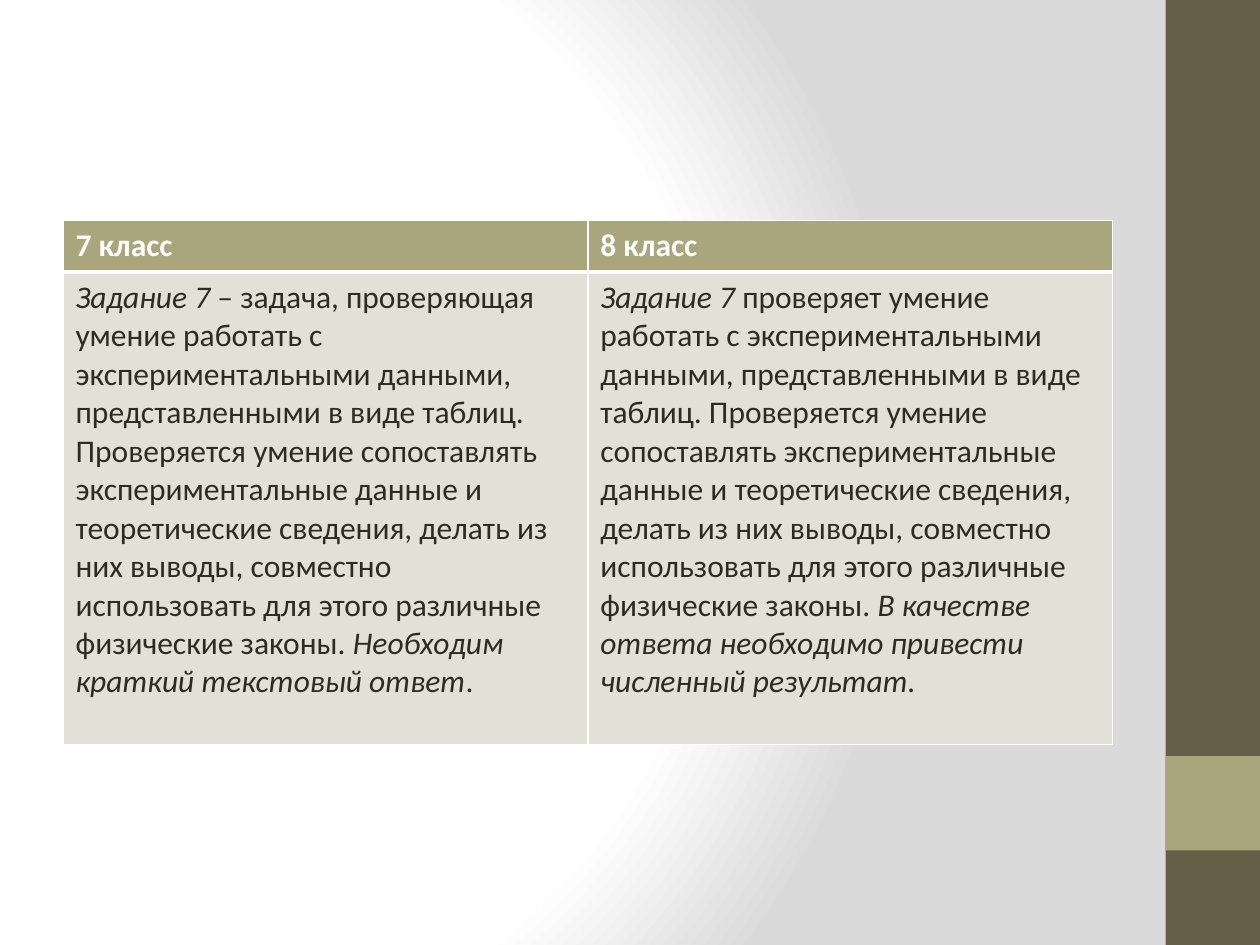
from pptx import Presentation
from pptx.dml.color import RGBColor
from pptx.enum.shapes import MSO_SHAPE
from pptx.oxml import parse_xml
from pptx.oxml.ns import nsdecls
from pptx.util import Inches, Pt

# Content: each cell is a list of (text, italic) runs
SKILL = (" проверя{} умение работать с экспериментальными данными, "
         "представленными в виде таблиц. Проверяется умение сопоставлять "
         "экспериментальные данные и теоретические сведения, делать из них "
         "выводы, совместно использовать для этого различные физические законы. ")
TASK = ("Задание 7", True)
ROWS = [
    [[("7 класс", False)], [("8 класс", False)]],
    [[TASK, (" – задача," + SKILL.format("ющая"), False),
      ("Необходим краткий текстовый ответ", True), (".", False)],
     [TASK, (SKILL.format("ет"), False),
      ("В качестве ответа необходимо привести численный результат.", True)]],
]

# Format of the header row and the body row
LOOKS = [
    {"fill": "A9A57C", "color": "FFFFFF", "bold": True, "high": 0.41, "base": 3},
    {"fill": "E2E1D7", "color": "2F2B20", "bold": False, "high": 3.75, "base": 1},
]
BARS = [((9.25, 0, 0.75, 7.5), "675E47"), ((9.25, 6, 0.75, 0.75), "A9A57C")]
STOPS = [(0, "FFFFFF"), (75, "FFFFFF"), (100, "DADADA")]
LEFT, TOP, WIDE = 0.5, 1.75, 8.33


def paint(fill, color):
    fill.solid()
    fill.fore_color.rgb = RGBColor.from_string(color)


def edge(cell, side, width):
    cell._tc.get_or_add_tcPr().append(parse_xml(
        f'<a:ln{side} {nsdecls("a")} w="{Pt(width)}"><a:solidFill>'
        f'<a:srgbClr val="FFFFFF"/></a:solidFill></a:ln{side}>'))


def write(cell, runs, look):
    for text, slant in runs:
        run = cell.text_frame.paragraphs[0].add_run()
        run.text = text
        style = {"name": "Calibri", "size": Pt(18),
                 "bold": look["bold"], "italic": slant}
        for key, value in style.items():
            setattr(run.font, key, value)
        run.font.color.rgb = RGBColor.from_string(look["color"])


deck = Presentation()
deck.slide_width, deck.slide_height = Inches(10), Inches(7.5)
slide = deck.slides.add_slide(deck.slide_layouts[6])

# Radial background
stops = "".join(f'<a:gs pos="{pos * 1000}"><a:srgbClr val="{color}"/></a:gs>'
                for pos, color in STOPS)
slide._element.cSld.insert(0, parse_xml(
    f'<p:bg {nsdecls("p", "a")}><p:bgPr><a:gradFill rotWithShape="1">'
    f'<a:gsLst>{stops}</a:gsLst><a:path path="circle">'
    '<a:fillToRect l="20000" t="50000" r="100000" b="50000"/></a:path>'
    '</a:gradFill><a:effectLst/></p:bgPr></p:bg>'))

# Side bars
for box, color in BARS:
    bar = slide.shapes.add_shape(MSO_SHAPE.RECTANGLE, *map(Inches, box))
    bar.shadow.inherit = False
    paint(bar.fill, color)
    bar.line.fill.background()

# Table
high = sum(look["high"] for look in LOOKS)
table = slide.shapes.add_table(
    len(ROWS), len(ROWS[0]), *map(Inches, (LEFT, TOP, WIDE, high))).table
for r, (row, look) in enumerate(zip(ROWS, LOOKS)):
    table.rows[r].height = Inches(look["high"])
    for c, runs in enumerate(row):
        cell = table.cell(r, c)
        top = LOOKS[r - 1]["base"] if r else 1
        for side, width in zip("LRTB", (1, 1, top, look["base"])):
            edge(cell, side, width)
        paint(cell.fill, look["fill"])
        write(cell, runs, look)

deck.save("out.pptx")
